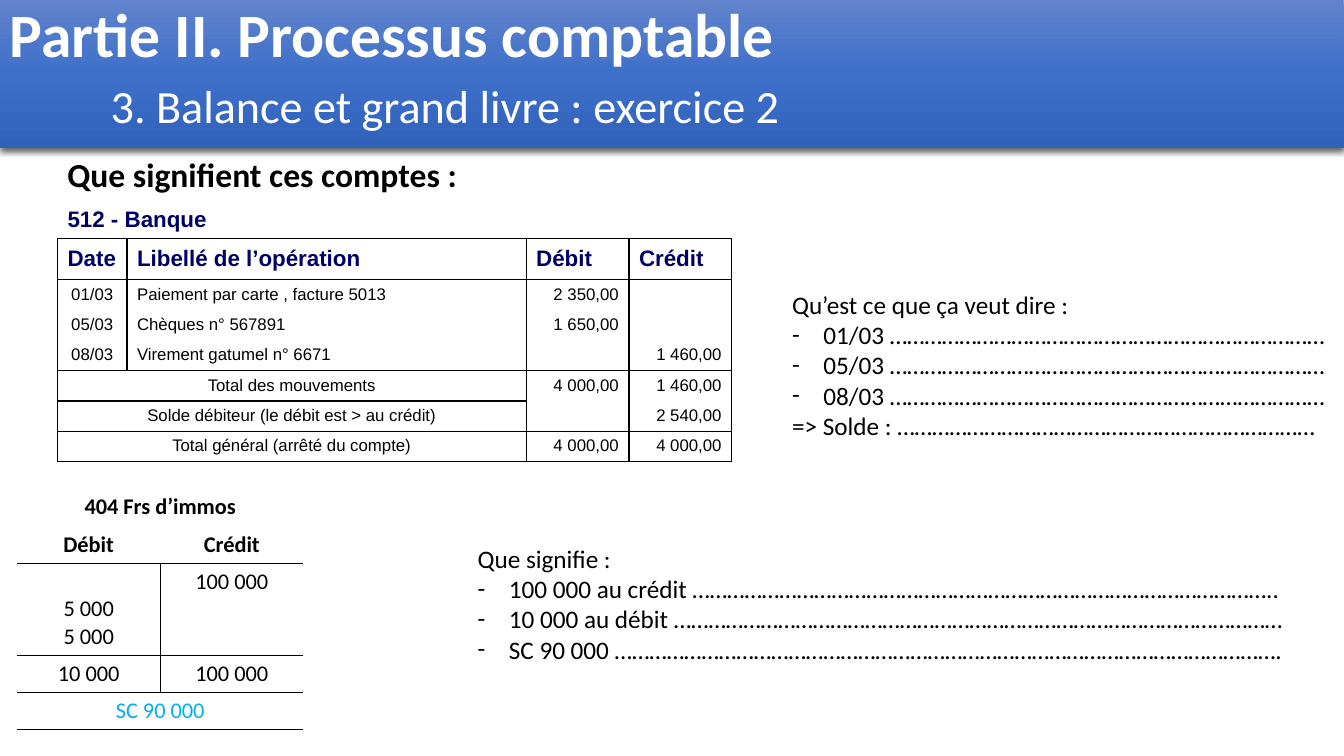
from copy import deepcopy

from lxml import etree
from pptx import Presentation
from pptx.dml.color import RGBColor
from pptx.enum.shapes import MSO_SHAPE
from pptx.enum.text import MSO_ANCHOR, PP_ALIGN
from pptx.oxml.ns import qn
from pptx.util import Emu, Inches, Pt

BLACK = RGBColor(0x00, 0x00, 0x00)
WHITE = RGBColor(0xFF, 0xFF, 0xFF)
NAVY = RGBColor(0x00, 0x00, 0x66)
CYAN = RGBColor(0x00, 0xB0, 0xF0)
BANNER_STOPS = [(0, RGBColor(0x61, 0x83, 0xCB)),
                (0.5, RGBColor(0x3E, 0x70, 0xCA)),
                (1, RGBColor(0x30, 0x62, 0xBB))]

LEFT, CENTER, RIGHT = PP_ALIGN.LEFT, PP_ALIGN.CENTER, PP_ALIGN.RIGHT
TOP, MIDDLE, BOTTOM = MSO_ANCHOR.TOP, MSO_ANCHOR.MIDDLE, MSO_ANCHOR.BOTTOM
RECTANGLE = MSO_SHAPE.RECTANGLE

TITLE = {"name": "Calibri", "size": Pt(44), "bold": True, "color": WHITE}
SUBTITLE = {**TITLE, "size": Pt(33), "bold": False}
HEADING = {"name": "Calibri", "size": Pt(24), "bold": True, "color": BLACK}
QUESTION = {"name": "Calibri", "size": Pt(18), "color": BLACK}
BANK_HEADER = {"name": "Arial", "size": Pt(16), "bold": True, "color": NAVY}
BANK_BODY = {"name": "Arial", "size": Pt(12), "bold": False, "color": BLACK}
T_HEADER = {"name": "Calibri", "size": Pt(16), "bold": True, "color": BLACK}
T_BODY = {**T_HEADER, "bold": False}
T_BALANCE = {**T_BODY, "color": CYAN}

# Each row: height, text format, alignments, texts, borders of each cell
# (left, top, right, bottom). A None text is merged into the cell before it.
BANK_ROWS = [
    (0.34, BANK_HEADER, [LEFT] * 4, ["512 - Banque", None, None, None], ["b"] * 4),
    (0.41, BANK_HEADER, [LEFT] * 4,
     ["Date", "Libellé de l’opération", "Débit", "Crédit"], ["ltrb"] * 4),
    (0.29, BANK_BODY, [CENTER, LEFT, RIGHT, RIGHT],
     ["01/03", "Paiement par carte , facture 5013", "2 350,00", ""], ["ltr"] * 4),
    (0.29, BANK_BODY, [CENTER, LEFT, RIGHT, RIGHT],
     ["05/03", "Chèques n° 567891", "1 650,00", ""], ["lr"] * 4),
    (0.29, BANK_BODY, [CENTER, LEFT, RIGHT, RIGHT],
     ["08/03", "Virement gatumel n° 6671", "", "1 460,00"], ["lrb"] * 4),
    (0.29, BANK_BODY, [CENTER, CENTER, RIGHT, RIGHT],
     ["Total des mouvements", None, "4 000,00", "1 460,00"],
     ["ltrb", "trb", "ltr", "ltr"]),
    (0.29, BANK_BODY, [CENTER, CENTER, RIGHT, RIGHT],
     ["Solde débiteur (le débit est > au crédit)", None, "", "2 540,00"],
     ["ltrb", "trb", "lrb", "lrb"]),
    (0.29, BANK_BODY, [CENTER, CENTER, RIGHT, RIGHT],
     ["Total général (arrêté du compte)", None, "4 000,00", "4 000,00"],
     ["ltrb", "trb", "ltrb", "ltrb"]),
]
SUPPLIER_ROWS = [
    (0.39, T_HEADER, [CENTER] * 2, ["404 Frs d’immos", None], ["", ""]),
    (0.37, T_HEADER, [CENTER] * 2, ["Débit", "Crédit"], ["b", "b"]),
    (0.91, T_BODY, [CENTER] * 2, ["5 000\n5 000", "100 000"], ["trb", "ltb"]),
    (0.37, T_BODY, [CENTER] * 2, ["10 000", "100 000"], ["trb", "ltb"]),
    (0.37, T_BALANCE, [CENTER] * 2, ["SC 90 000", None], ["tb", "tb"]),
]
BANK_QUESTIONS = [
    "Qu’est ce que ça veut dire :",
    "- 01/03 …………………………………………………………………",
    "- 05/03 …………………………………………………………………",
    "- 08/03 …………………………………………………………………",
    "=> Solde : ………………………………………………………………",
]
SUPPLIER_QUESTIONS = [
    "Que signifie :",
    "- 100 000 au crédit ………………………………………………………………………………………..",
    "- 10 000 au débit ……………………………………………………………………………………………",
    "- SC 90 000 …………………………………………………………………………………………………….",
]


def add_element(parent, tag, **attributes):
    return etree.SubElement(parent, qn(tag), attributes)


def write(paragraph, text, text_format):
    """Write one run; an empty paragraph only takes the text size."""
    if not text:
        size = str(int(text_format["size"].pt * 100))
        add_element(paragraph._p, "a:endParaRPr", sz=size)
        return
    run = paragraph.add_run()
    run.text = text
    for key, value in text_format.items():
        if key == "color":
            run.font.color.rgb = value
        else:
            setattr(run.font, key, value)


def add_lines(frame, lines):
    """Write (text, format) lines and return their paragraphs."""
    paragraphs = []
    for index, (text, text_format) in enumerate(lines):
        paragraph = frame.add_paragraph() if index else frame.paragraphs[0]
        write(paragraph, text, text_format)
        paragraphs.append(paragraph)
    return paragraphs


def add_text_box(slide, box):
    frame = slide.shapes.add_textbox(*map(Inches, box)).text_frame
    frame.word_wrap = True
    return frame


def add_banner(slide, box):
    banner = slide.shapes.add_shape(RECTANGLE, *map(Inches, box))
    banner.line.fill.background()
    banner.fill.gradient()
    banner.fill.gradient_angle = 270
    properties = banner.element.spPr
    stop_list = properties.find(".//" + qn("a:gsLst"))
    stop_list.append(deepcopy(stop_list[0]))
    for stop, (position, color) in zip(banner.fill.gradient_stops, BANNER_STOPS):
        stop.position = position
        stop.color.rgb = color
    effects = add_element(properties, "a:effectLst")
    shadow = add_element(effects, "a:outerShdw", blurRad=str(Pt(4.5)),
                         dist=str(Pt(1.5)), dir="5400000", rotWithShape="0")
    color = add_element(shadow, "a:srgbClr", val=str(BLACK))
    add_element(color, "a:alpha", val="63000")

    frame = banner.text_frame
    frame.word_wrap = True
    frame.vertical_anchor = MIDDLE
    frame.margin_bottom = Inches(0.16)
    title, subtitle = add_lines(frame, [
        ("Partie II. Processus comptable", TITLE),
        ("3. Balance et grand livre : exercice 2", SUBTITLE)])
    for paragraph in (title, subtitle):
        paragraph.alignment = LEFT
        paragraph.line_spacing = 0.9
    subtitle.space_before = Pt(9)
    subtitle._p.get_or_add_pPr().set("marL", str(Inches(1)))


def add_heading(slide, box):
    frame = add_text_box(slide, box)
    paragraph, = add_lines(frame, [("Que signifient ces comptes :", HEADING)])
    paragraph.line_spacing = 0.9


def add_questions(slide, box, questions):
    """Lines that start with a dash become bulleted paragraphs."""
    lines = [(text.removeprefix("- "), QUESTION) for text in questions]
    paragraphs = add_lines(add_text_box(slide, box), lines)
    for paragraph, text in zip(paragraphs, questions):
        if text.startswith("- "):
            properties = paragraph._p.get_or_add_pPr()
            properties.set("marL", str(Inches(0.31)))
            properties.set("indent", str(-Inches(0.31)))
            add_element(properties, "a:buFont", typeface="Calibri")
            add_element(properties, "a:buChar", char="-")


def set_borders(cell, sides):
    properties = cell._tc.get_or_add_tcPr()
    for index, side in enumerate("lrtb"):
        line = etree.Element(qn(f"a:ln{side.upper()}"), w=str(Pt(1)))
        if side in sides:
            fill = add_element(line, "a:solidFill")
            add_element(fill, "a:srgbClr", val=str(BLACK))
        else:
            add_element(line, "a:noFill")
        properties.insert(index, line)


def add_account(slide, left, top, widths, rows, anchors):
    """Draw a ledger account; anchors gives the vertical anchor of each row."""
    height = sum(row[0] for row in rows)
    table = slide.shapes.add_table(len(rows), len(widths), Inches(left), Inches(top),
                                   Inches(sum(widths)), Inches(height)).table
    table.first_row = table.horz_banding = False
    for column, width in zip(table.columns, widths):
        column.width = Inches(width)
    for row_index, (row_height, text_format, alignments, texts, borders) in enumerate(rows):
        table.rows[row_index].height = Inches(row_height)
        for column_index, text in enumerate(texts):
            cell = table.cell(row_index, column_index)
            cell.fill.background()
            cell.vertical_anchor = anchors[row_index]
            set_borders(cell, borders[column_index])
            lines = [(line, text_format) for line in (text or "").split("\n")]
            for paragraph in add_lines(cell.text_frame, lines):
                paragraph.alignment = alignments[column_index]
        if None in texts:
            first = texts.index(None) - 1
            last = first + texts.count(None)
            table.cell(row_index, first).merge(table.cell(row_index, last))
    return table


def main():
    presentation = Presentation()
    presentation.slide_width = Emu(12192000)
    presentation.slide_height = Inches(7.5)
    slide = presentation.slides.add_slide(presentation.slide_layouts[6])
    add_banner(slide, (0, 0, 13.33, 1.47))
    add_heading(slide, (0.57, 1.52, 12.18, 0.5))
    add_account(slide, 0.57, 2, [0.69, 3.96, 1.02, 1.02], BANK_ROWS,
                [MIDDLE] * 2 + [TOP] * 6)
    add_questions(slide, (4.64, 5.34, 8.32, 1.31), SUPPLIER_QUESTIONS)
    supplier = add_account(slide, 0.17, 4.83, [1.42, 1.42], SUPPLIER_ROWS,
                           [MIDDLE] + [TOP] * 4)
    supplier.cell(2, 0).vertical_anchor = BOTTOM
    add_questions(slide, (7.76, 2.82, 5.55, 1.62), BANK_QUESTIONS)
    presentation.save("out.pptx")


if __name__ == "__main__":
    main()
